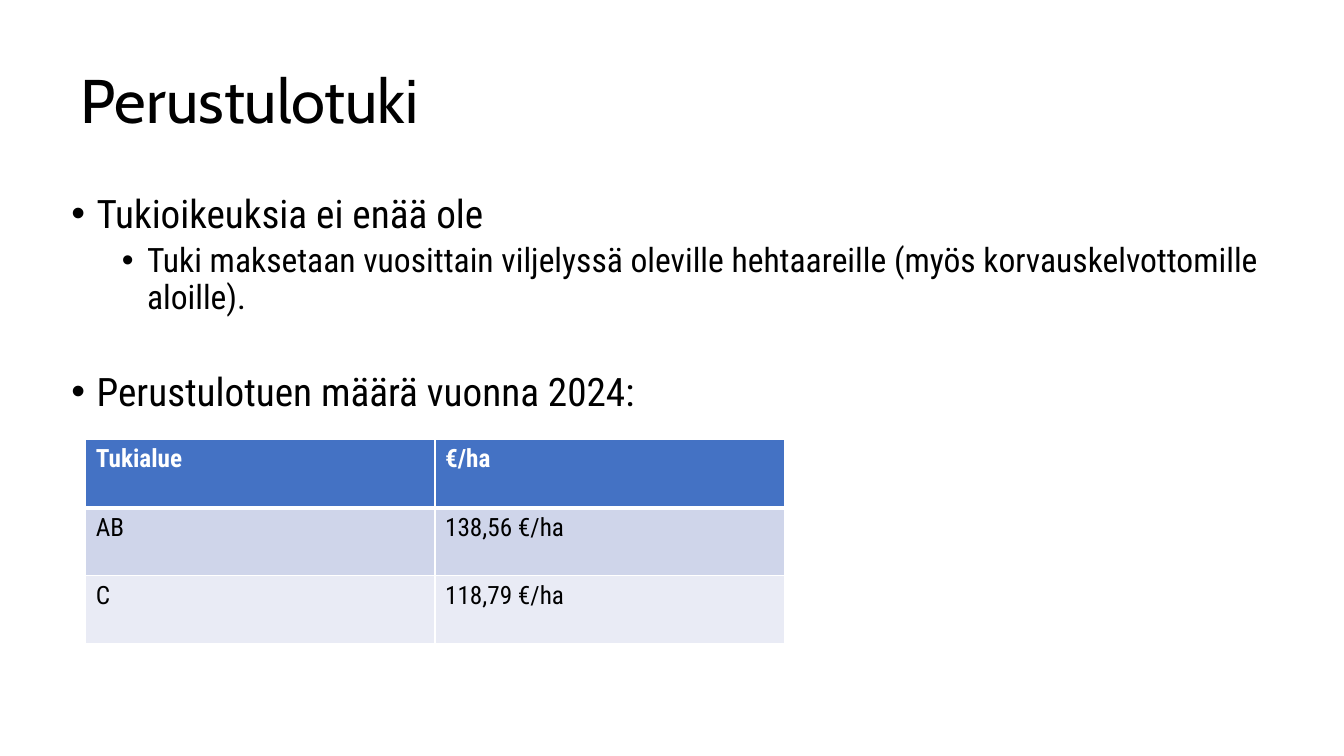
from lxml.etree import SubElement
from pptx import Presentation
from pptx.dml.color import RGBColor
from pptx.enum.text import MSO_ANCHOR
from pptx.oxml.ns import qn
from pptx.util import Inches, Pt

# Content
TITLE = "Perustulotuki"
# text, level, size, space before
BULLETS = [
    ("Tukioikeuksia ei enää ole", 0, 28, 0),
    ("Tuki maksetaan vuosittain viljelyssä oleville hehtaareille "
     "(myös korvauskelvottomille aloille).", 1, 24, 5),
    ("Perustulotuen määrä vuonna 2024:", 0, 28, 40),
]
SUPPORT_ROWS = [
    ("Tukialue", "€/ha"),
    ("AB", "138,56 €/ha"),
    ("C", "118,79 €/ha"),
]
COLORS = {"text": "000000", "white": "FFFFFF", "header": "4472C4",
          "band_dark": "CFD5EA", "band_light": "E9EBF5"}
ROW_FILLS = ["header", "band_dark", "band_light"]
TITLE_FONT, BODY_FONT = "Cabin", "Roboto Condensed"


def write(para, text, size, font=BODY_FONT, color="text", bold=False,
          line=None, before=0, bullet_level=None):
    if bullet_level is not None:
        props = para._p.get_or_add_pPr()
        props.set("marL", str(Inches(0.25 + 0.5 * bullet_level)))
        props.set("indent", str(Inches(-0.25)))
        SubElement(props, qn("a:buFont"), typeface="Arial")
        SubElement(props, qn("a:buChar"), char="•")
        para.level = bullet_level
    if line:
        para.line_spacing = line
    para.space_before = Pt(before)
    span = para.add_run()
    span.text = text
    span.font.name = font
    span.font.size = Pt(size)
    span.font.bold = bold
    span.font.color.rgb = RGBColor.from_string(COLORS[color])


def add_frame(page, left, top, width, height, anchor=MSO_ANCHOR.TOP):
    box = page.shapes.add_textbox(Inches(left), Inches(top),
                                  Inches(width), Inches(height))
    frame = box.text_frame
    frame.word_wrap = True
    frame.vertical_anchor = anchor
    return frame


def add_borders(cell, **widths):
    props = cell._tc.get_or_add_tcPr()
    for side in "LRTB":
        border = SubElement(props, qn(f"a:ln{side}"), w=str(Pt(widths.get(side, 1))))
        fill = SubElement(border, qn("a:solidFill"))
        SubElement(fill, qn("a:srgbClr"), val=COLORS["white"])


deck = Presentation()
deck.slide_width, deck.slide_height = Inches(13.33), Inches(7.5)
page = deck.slides.add_slide(deck.slide_layouts[6])

# Title
title = add_frame(page, 0.7, 0.3, 11.5, 1.45, MSO_ANCHOR.MIDDLE)
write(title.paragraphs[0], TITLE, 44, font=TITLE_FONT, line=0.9)

# Bullets
body = add_frame(page, 0.61, 1.88, 12.12, 2.35)
for index, (text, level, size, before) in enumerate(BULLETS):
    para = body.add_paragraph() if index else body.paragraphs[0]
    write(para, text, size, line=0.9, before=before, bullet_level=level)

# Support table
table = page.shapes.add_table(len(SUPPORT_ROWS), 2, Inches(0.85), Inches(4.36),
                              Inches(6.93), Inches(2.03)).table
for row, values in enumerate(SUPPORT_ROWS):
    header = row == 0
    for column, text in enumerate(values):
        cell = table.cell(row, column)
        add_borders(cell, B=3 if header else 1, T=3 if row == 1 else 1)
        cell.fill.solid()
        cell.fill.fore_color.rgb = RGBColor.from_string(COLORS[ROW_FILLS[row]])
        write(cell.text_frame.paragraphs[0], text, 18, bold=header,
              color="white" if header else "text")

deck.save("out.pptx")
